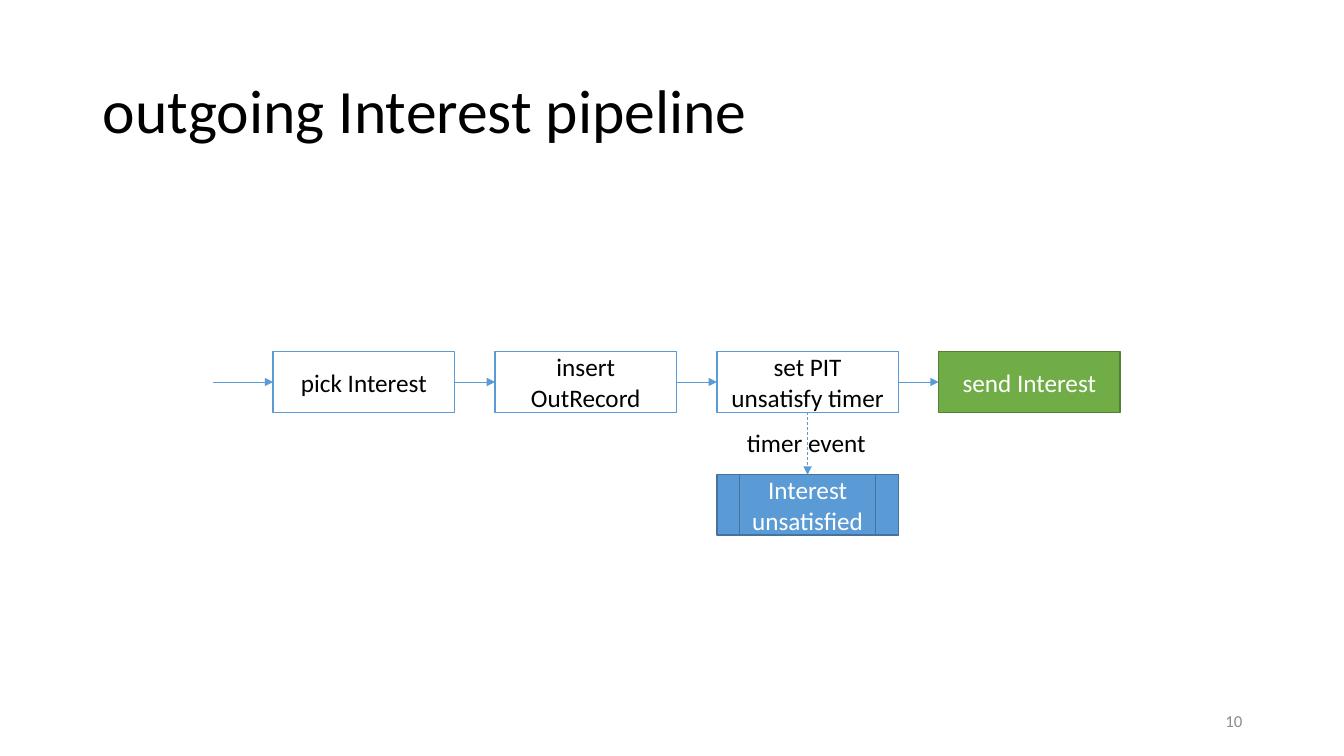
"""Builds the outgoing Interest pipeline slide."""
import pptx
import pptx.dml.color
import pptx.enum.dml
import pptx.enum.shapes
import pptx.enum.text
import pptx.oxml.ns
import pptx.util
from lxml import etree

Inches = pptx.util.Inches
Align = pptx.enum.text.PP_ALIGN
Anchor = pptx.enum.text.MSO_ANCHOR
Preset = pptx.enum.shapes.MSO_SHAPE
qn = pptx.oxml.ns.qn

COLORS = {
    "black": "000000",
    "white": "FFFFFF",
    "gray": "8C8C8C",
    "blue": "5B9BD5",
    "dark blue": "43739E",
    "green": "70AD47",
    "dark green": "538035",
}
STEPS = [
    ("pick Interest", "white", "blue", "black"),
    ("insert OutRecord", "white", "blue", "black"),
    ("set PIT unsatisfy timer", "white", "blue", "black"),
    ("send Interest", "green", "dark green", "white"),
]
BOX_WIDTH, BOX_HEIGHT = 1.8, 0.6
STEP_LEFT, STEP_TOP, STEP_PITCH = 2.71, 3.49, 2.2
ENTRY_LEFT = 2.11
TIMER_STEP = 2
UNSATISFIED_TOP = 4.71


def rgb(name):
    return pptx.dml.color.RGBColor.from_string(COLORS[name])


def write(shape, text, size, color, align, anchor=Anchor.MIDDLE, wrap=True):
    frame = shape.text_frame
    frame.word_wrap = wrap
    frame.vertical_anchor = anchor
    paragraph = frame.paragraphs[0]
    paragraph.alignment = align
    run = paragraph.add_run()
    run.text = text
    run.font.name = "Calibri"
    run.font.size = pptx.util.Pt(size)
    run.font.color.rgb = rgb(color)
    return paragraph


def set_title(slide, text):
    title = slide.shapes.title
    title.left, title.top = Inches(0.92), Inches(0.4)
    title.width, title.height = Inches(11.5), Inches(1.45)
    title.text_frame.auto_size = pptx.enum.text.MSO_AUTO_SIZE.NONE
    paragraph = write(title, text, 44, "black", Align.LEFT)
    paragraph.line_spacing = 0.9


def add_label(slide, left, top, width, height, *text_style, **layout):
    label = slide.shapes.add_textbox(Inches(left), Inches(top), Inches(width), Inches(height))
    write(label, *text_style, **layout)


def add_box(slide, preset, left, top, text, fill, line, font_color):
    box = slide.shapes.add_shape(
        preset, Inches(left), Inches(top), Inches(BOX_WIDTH), Inches(BOX_HEIGHT))
    box.shadow.inherit = False
    box.fill.solid()
    box.fill.fore_color.rgb = rgb(fill)
    box.line.color.rgb = rgb(line)
    box.line.width = pptx.util.Pt(1)
    write(box, text, 18, font_color, Align.CENTER)


def add_arrow(slide, start, end, dashed=False):
    arrow = slide.shapes.add_connector(
        pptx.enum.shapes.MSO_CONNECTOR.STRAIGHT, *map(Inches, start + end))
    arrow.line.color.rgb = rgb("blue")
    arrow.line.width = pptx.util.Pt(0.5)
    if dashed:
        arrow.line.dash_style = pptx.enum.dml.MSO_LINE.DASH
    properties = arrow.element.spPr
    etree.SubElement(properties.find(qn("a:ln")), qn("a:tailEnd"), type="triangle")
    etree.SubElement(properties, qn("a:effectLst"))


def add_pipeline(slide):
    middle = STEP_TOP + BOX_HEIGHT / 2
    arrow_start = ENTRY_LEFT
    for index, step in enumerate(STEPS):
        left = STEP_LEFT + index * STEP_PITCH
        add_box(slide, Preset.RECTANGLE, left, STEP_TOP, *step)
        add_arrow(slide, (arrow_start, middle), (left, middle))
        arrow_start = left + BOX_WIDTH


def add_timer_branch(slide):
    left = STEP_LEFT + TIMER_STEP * STEP_PITCH
    center = left + BOX_WIDTH / 2
    add_box(slide, Preset.FLOWCHART_PREDEFINED_PROCESS, left, UNSATISFIED_TOP,
            "Interest unsatisfied", "blue", "dark blue", "white")
    add_arrow(slide, (center, STEP_TOP + BOX_HEIGHT), (center, UNSATISFIED_TOP), dashed=True)
    add_label(slide, center - 0.7, 4.19, 1.4, 0.4, "timer event", 18, "black", Align.LEFT,
              anchor=Anchor.TOP, wrap=False)


def main():
    presentation = pptx.Presentation()
    presentation.slide_width = Inches(13.33)
    presentation.slide_height = Inches(7.5)
    slide = presentation.slides.add_slide(presentation.slide_layouts[5])
    set_title(slide, "outgoing Interest pipeline")
    add_label(slide, 9.42, 6.95, 3, 0.4, "10", 12, "gray", Align.RIGHT)
    add_pipeline(slide)
    add_timer_branch(slide)
    presentation.save("out.pptx")


if __name__ == "__main__":
    main()
